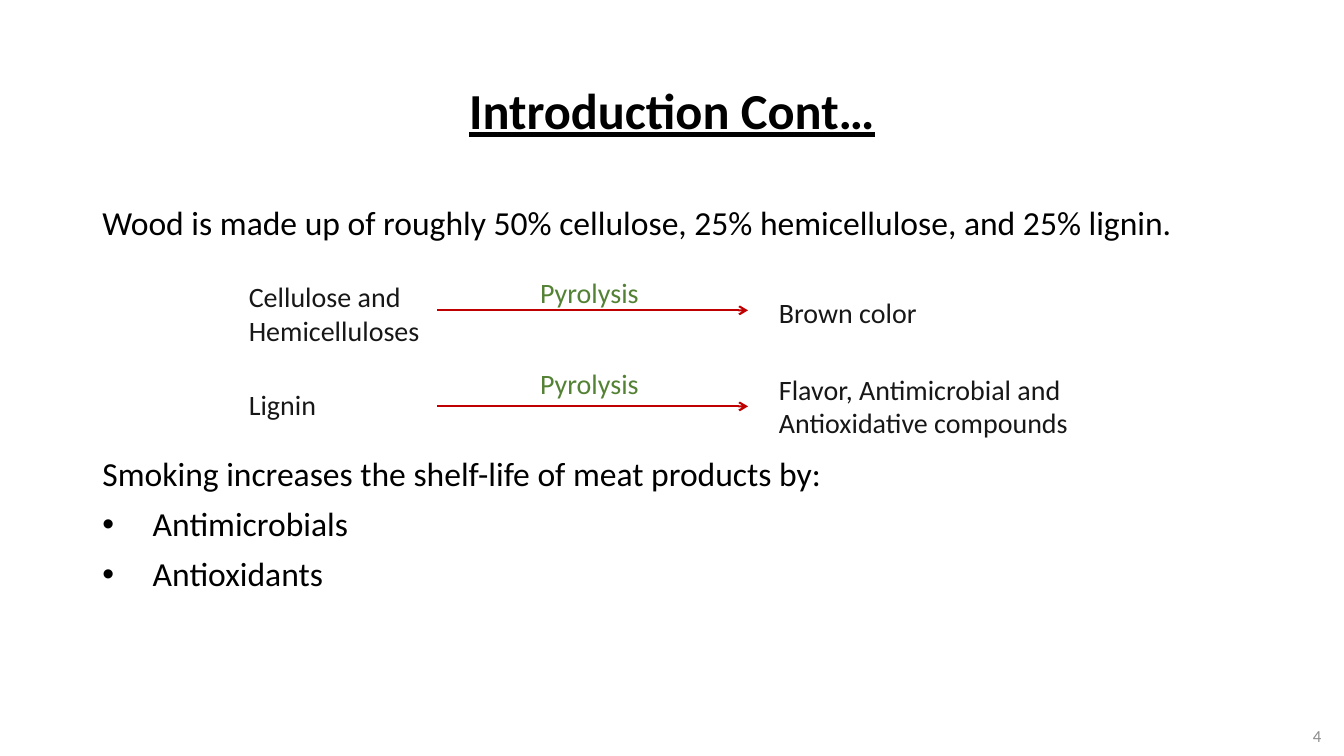
"""Build the slide on wood pyrolysis and the effects of smoking meat."""
from lxml import etree
from pptx import Presentation
from pptx.dml.color import RGBColor
from pptx.enum.shapes import MSO_CONNECTOR
from pptx.enum.text import MSO_ANCHOR, PP_ALIGN
from pptx.oxml.ns import qn
from pptx.util import Cm, Pt

STRAIGHT = MSO_CONNECTOR.STRAIGHT
TOP, MIDDLE = MSO_ANCHOR.TOP, MSO_ANCHOR.MIDDLE
LEFT, CENTER, RIGHT = PP_ALIGN.LEFT, PP_ALIGN.CENTER, PP_ALIGN.RIGHT
COLORS = {"text": "000000", "label": "181717", "process": "548235",
          "arrow": "C00000", "number": "8C8C8C"}

presentation = Presentation()
presentation.slide_width = Cm(33.87)
presentation.slide_height = Cm(19.05)
slide = presentation.slides.add_slide(presentation.slide_layouts[6])


def add_text(text, left, top, width, height, size, color, align=LEFT, anchor=TOP):
    """Add a wrapping text box and return its text frame."""
    frame = slide.shapes.add_textbox(Cm(left), Cm(top), Cm(width), Cm(height)).text_frame
    frame.word_wrap = True
    frame.vertical_anchor = anchor
    frame.text = text
    for paragraph in frame.paragraphs:
        paragraph.alignment = align
        for run in paragraph.runs:
            run.font.name = "Calibri"
            run.font.size = Pt(size)
            run.font.color.rgb = RGBColor.from_string(COLORS[color])
    return frame


title = add_text("Introduction Cont…", 2.33, 1.02, 29.21, 3.68, 36, "text", CENTER, MIDDLE)
title.paragraphs[0].line_spacing = 0.9
title_font = title.paragraphs[0].runs[0].font
title_font.bold = True
title_font.underline = True

composition = add_text("Wood is made up of roughly 50% cellulose, 25% hemicellulose, and 25% lignin.",
                       2.33, 5.08, 29.21, 1.4, 24, "text")
composition.paragraphs[0].line_spacing = 0.9

benefits = add_text("Smoking increases the shelf-life of meat products by:\nAntimicrobials\nAntioxidants",
                    2.33, 11.4, 29.21, 5.77, 24, "text")
for index, paragraph in enumerate(benefits.paragraphs):
    paragraph.line_spacing = 0.9
    if index > 0:
        paragraph.space_before = Pt(10)
        properties = paragraph._p.get_or_add_pPr()
        properties.set("marL", str(Cm(1.27)))
        properties.set("indent", str(-Cm(1.27)))
        etree.SubElement(properties, qn("a:buFont")).set("typeface", "Arial")
        etree.SubElement(properties, qn("a:buChar")).set("char", "•")

reactions = [
    ("Cellulose and Hemicelluloses", 6.93, 1.96, "Brown color", 7.32, 1.12, 6.81, 7.82),
    ("Lignin", 9.63, 1.12, "Flavor, Antimicrobial and Antioxidative compounds", 9.25, 1.96, 9.12, 10.24),
]
for source, source_top, source_height, product, product_top, product_height, process_top, arrow_y in reactions:
    add_text(source, 6.02, source_top, 5.08, source_height, 20, "label")
    add_text(product, 19.38, product_top, 8.46, product_height, 20, "label")
    add_text("Pyrolysis", 13.36, process_top, 3.5, 1.12, 20, "process")
    arrow = slide.shapes.add_connector(STRAIGHT, Cm(11.02), Cm(arrow_y), Cm(18.85), Cm(arrow_y))
    arrow.line.color.rgb = RGBColor.from_string(COLORS["arrow"])
    arrow.line.width = Pt(1.5)
    etree.SubElement(arrow.line._get_or_add_ln(), qn("a:tailEnd")).set("type", "arrow")
    etree.SubElement(arrow._element.spPr, qn("a:effectLst"))

add_text("4", 25.93, 18.03, 7.62, 1.02, 12, "number", RIGHT, MIDDLE)

presentation.save("out.pptx")
